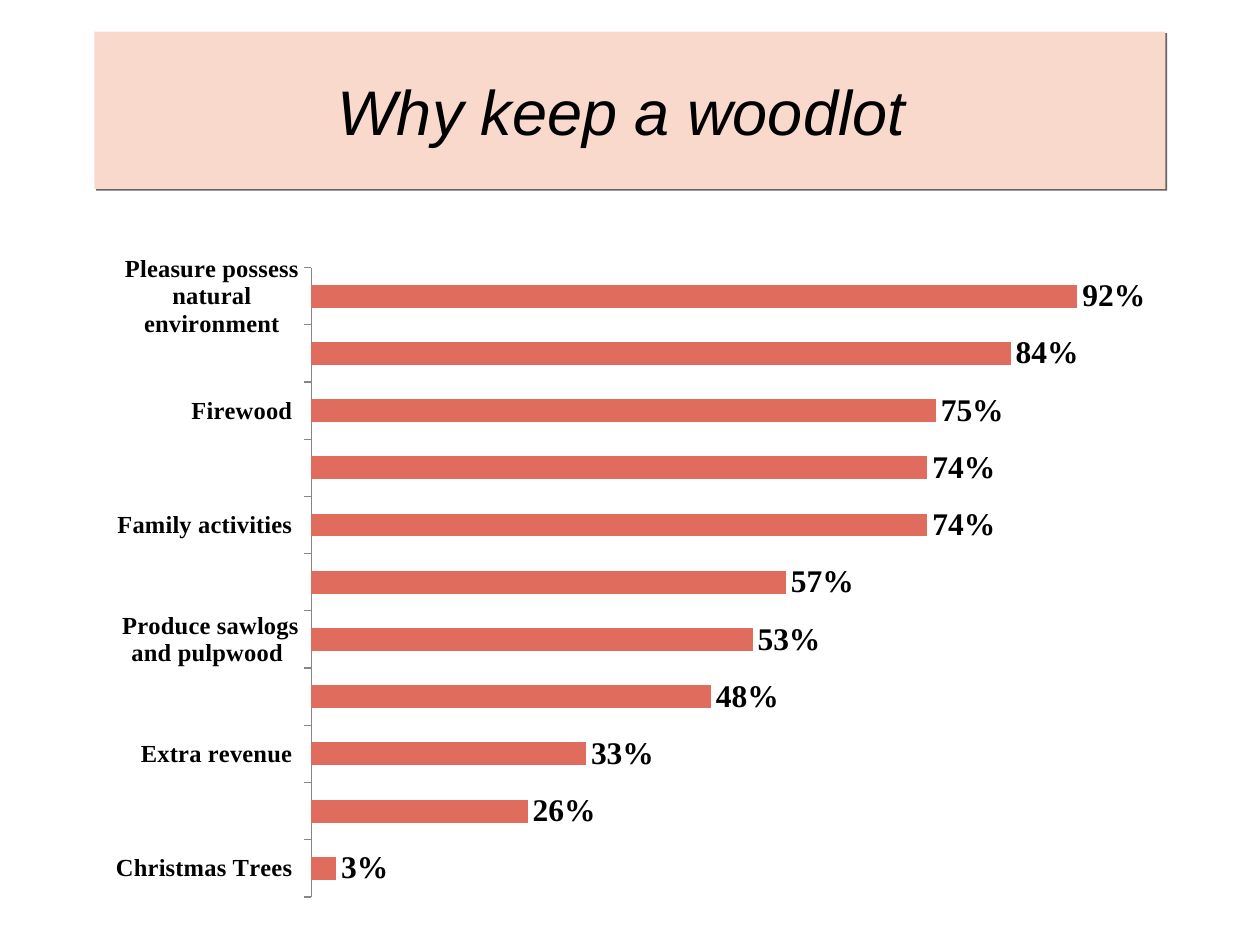
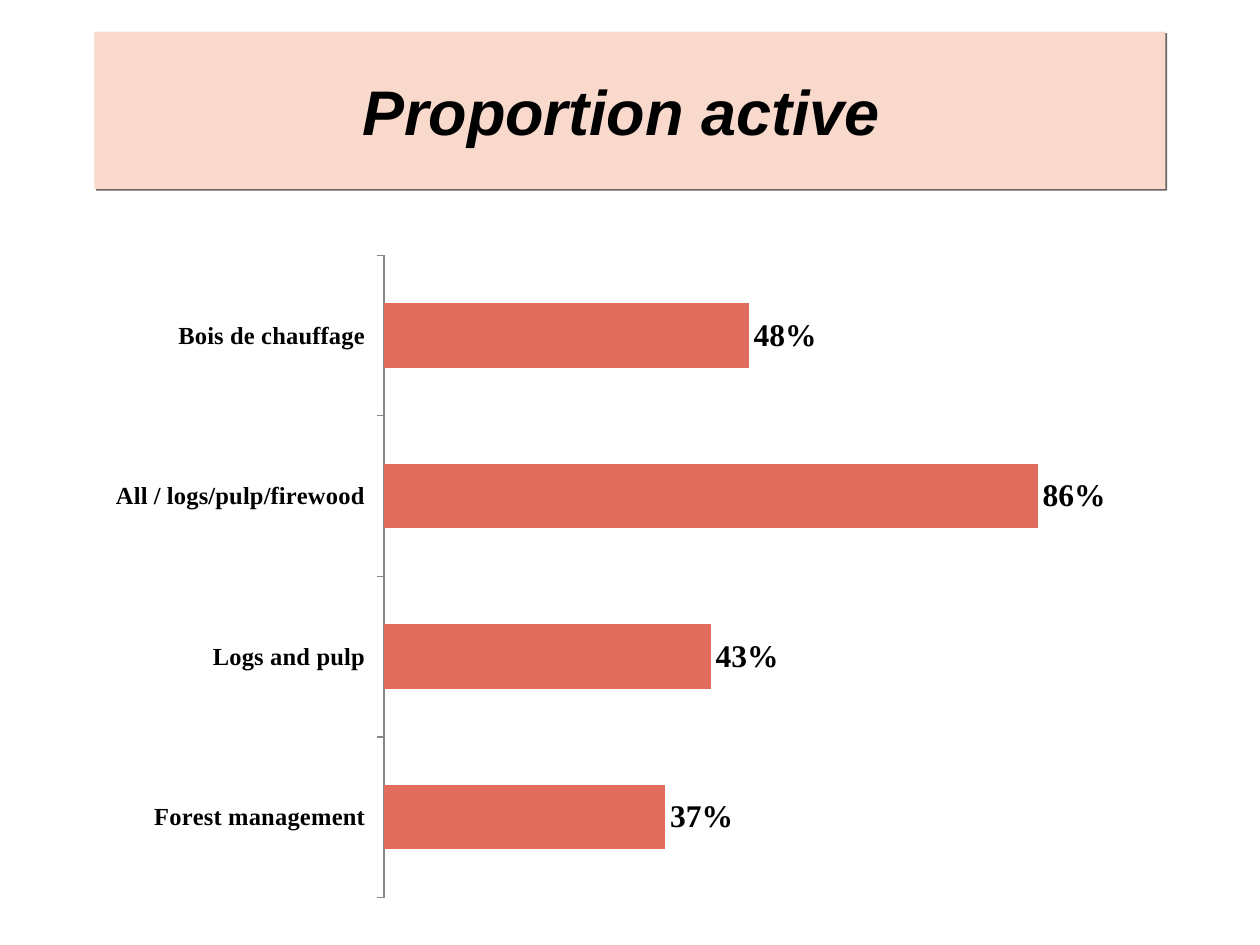
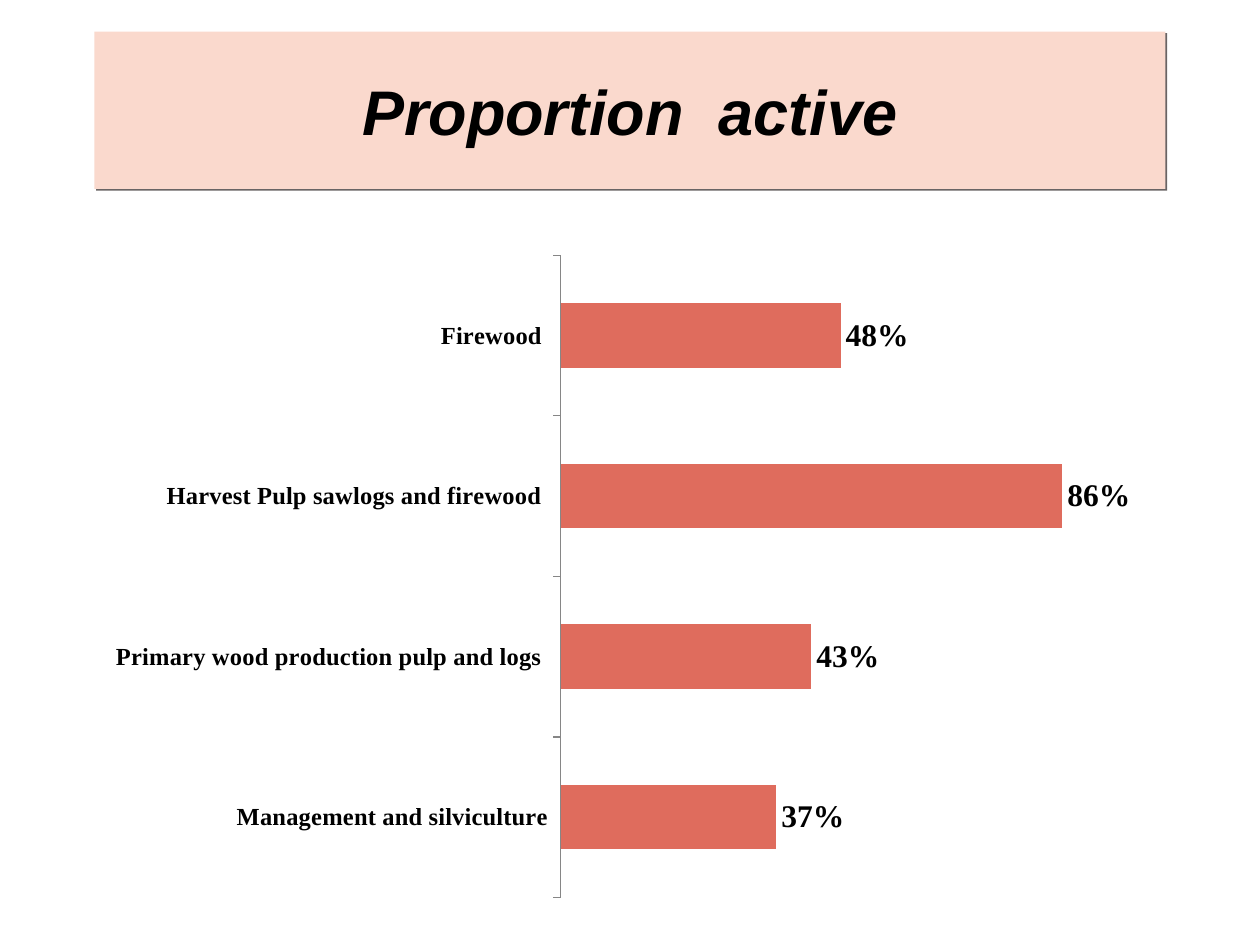
from dataclasses import dataclass

from lxml import etree
from pptx import Presentation
from pptx.chart.data import CategoryChartData
from pptx.dml.color import RGBColor
from pptx.enum.chart import XL_CHART_TYPE, XL_LABEL_POSITION, XL_TICK_MARK
from pptx.enum.shapes import MSO_SHAPE
from pptx.enum.text import MSO_ANCHOR, PP_ALIGN
from pptx.oxml.ns import qn
from pptx.util import Inches, Pt

BAR_CLUSTERED = XL_CHART_TYPE.BAR_CLUSTERED
OUTSIDE_END = XL_LABEL_POSITION.OUTSIDE_END
TICK_OUTSIDE = XL_TICK_MARK.OUTSIDE
TICK_NONE = XL_TICK_MARK.NONE
RECTANGLE = MSO_SHAPE.RECTANGLE
MIDDLE = MSO_ANCHOR.MIDDLE
CENTER = PP_ALIGN.CENTER


@dataclass(frozen=True)
class Theme:
    band: RGBColor = RGBColor.from_string("FAD9CD")
    shadow: str = "696464"
    bar: RGBColor = RGBColor.from_string("DF6C5D")
    axis: RGBColor = RGBColor.from_string("868686")
    text: RGBColor = RGBColor.from_string("000000")
    title_font: str = "Arial"
    chart_font: str = "Times New Roman"
    title_size: Pt = Pt(36)
    value_size: Pt = Pt(18)
    category_size: Pt = Pt(14)


theme = Theme()


def format_font(font, name, size, bold=False, italic=False):
    font.name = name
    font.size = size
    font.bold = bold
    font.italic = italic
    font.color.rgb = theme.text


def add_title(slide, text, bold=True):
    band = slide.shapes.add_shape(
        RECTANGLE, Inches(0.75), Inches(0.25), Inches(8.5), Inches(1.25)
    )
    band.fill.solid()
    band.fill.fore_color.rgb = theme.band
    band.line.fill.background()
    band.shadow.inherit = False
    effects = band.element.spPr.find(qn("a:effectLst"))
    shadow = etree.SubElement(
        effects, qn("a:outerShdw"), dist=str(Pt(1.4)), dir="2700000", rotWithShape="0"
    )
    etree.SubElement(shadow, qn("a:srgbClr"), val=theme.shadow)
    band.text_frame.word_wrap = True
    band.text_frame.vertical_anchor = MIDDLE
    paragraph = band.text_frame.paragraphs[0]
    paragraph.alignment = CENTER
    run = paragraph.add_run()
    run.text = text
    format_font(run.font, theme.title_font, theme.title_size, bold=bold, italic=True)


slides = [
    ("Why keep a woodlot ", False, [
        ("Christmas Trees ", 0.03),
        ("", 0.26),
        ("Extra revenue ", 0.33),
        ("", 0.48),
        ("Produce sawlogs and pulpwood ", 0.53),
        ("", 0.57),
        ("Family activities ", 0.74),
        ("", 0.74),
        ("Firewood ", 0.75),
        ("", 0.84),
        ("Pleasure possess natural environment", 0.92),
    ]),
    ("Proportion active ", True, [
        ("Forest management ", 0.37),
        ("Logs and pulp ", 0.43),
        ("All / logs/pulp/firewood ", 0.86),
        ("Bois de chauffage ", 0.48),
    ]),
    ("Proportion  active", True, [
        ("Management and silviculture", 0.37),
        ("Primary wood production pulp and logs ", 0.43),
        ("Harvest Pulp sawlogs and firewood ", 0.86),
        ("Firewood ", 0.48),
    ]),
]

presentation = Presentation()
presentation.slide_width = Inches(10)
presentation.slide_height = Inches(7.5)
blank_layout = presentation.slide_layouts[6]

for title, bold, answers in slides:
    slide = presentation.slides.add_slide(blank_layout)
    add_title(slide, title, bold=bold)

    chart_data = CategoryChartData(number_format="0%")
    chart_data.categories = [label for label, share in answers]
    chart_data.add_series("Series 1", [share for label, share in answers])
    chart = slide.shapes.add_chart(
        BAR_CLUSTERED, Inches(0.75), Inches(1.92), Inches(8.5), Inches(5.31), chart_data
    ).chart
    chart.has_title = False
    chart.has_legend = False
    format_font(chart.font, theme.chart_font, theme.value_size)

    category_axis = chart.category_axis
    category_axis.major_tick_mark = TICK_OUTSIDE
    category_axis.minor_tick_mark = TICK_NONE
    category_axis.has_major_gridlines = False
    category_axis.format.line.color.rgb = theme.axis
    category_axis.format.line.width = Pt(0.75)
    format_font(
        category_axis.tick_labels.font, theme.chart_font, theme.category_size, bold=True
    )

    value_axis = chart.value_axis
    value_axis.minimum_scale = 0
    value_axis.maximum_scale = 1
    value_axis.has_major_gridlines = False
    value_axis.visible = False

    plot = chart.plots[0]
    plot.gap_width = 150
    plot.vary_by_categories = False
    series = plot.series[0]
    series.format.fill.solid()
    series.format.fill.fore_color.rgb = theme.bar
    labels = series.data_labels
    labels.show_value = True
    labels.position = OUTSIDE_END
    labels.number_format = "0%"
    labels.number_format_is_linked = False
    format_font(labels.font, theme.chart_font, theme.value_size, bold=True)

presentation.save("out.pptx")
